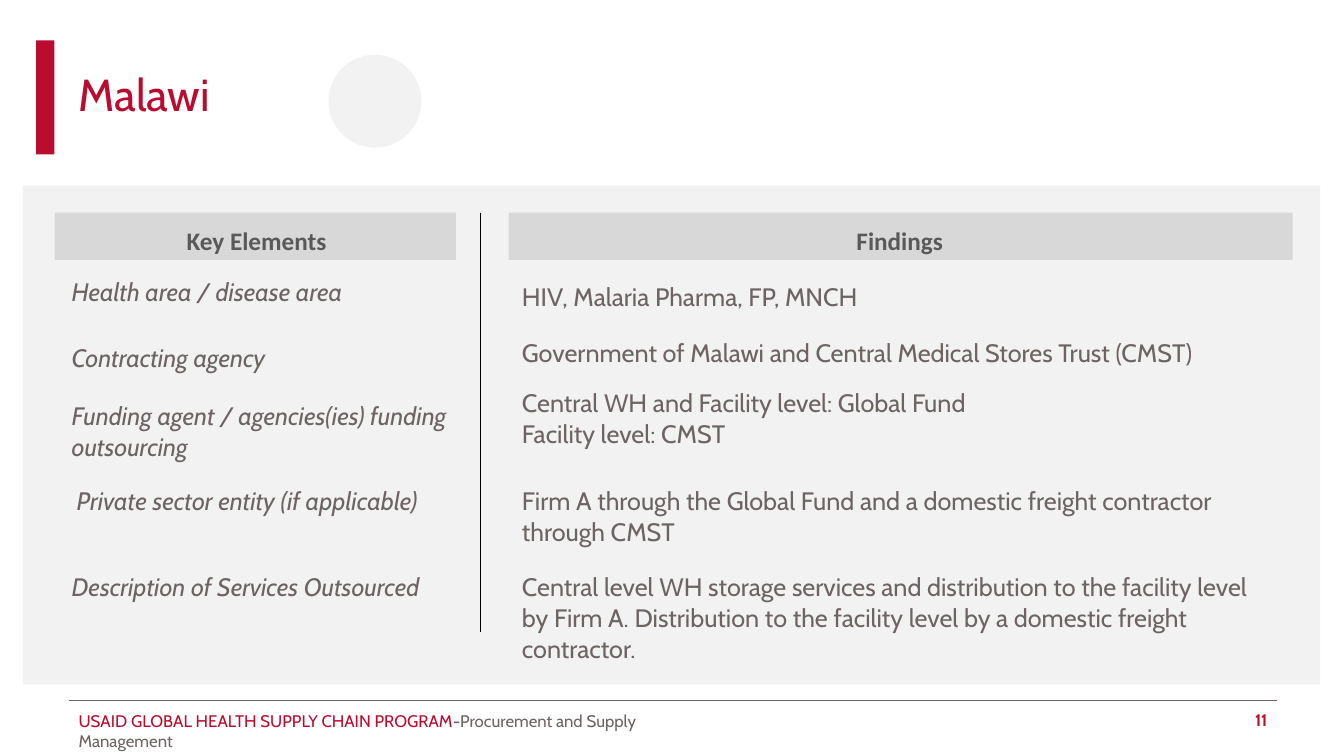
from lxml import etree
from pptx import Presentation
from pptx import util as u
from pptx.dml.color import RGBColor
from pptx.enum import shapes, text
from pptx.oxml.ns import qn

COLORS = {"red": "BA0C2F", "grey": "6C6463", "heading": "595959",
          "panel": "F2F2F2", "band": "D8D8D8", "black": "000000"}
NO_GRID_STYLE = "{2D5ABB26-0587-4C30-8999-92F81FD0307C}"


def style(paragraph, size, color, font="Cabin", bold=False, italic=False):
    """Format every run of a paragraph."""
    for run in paragraph.runs:
        run.font.size = u.Pt(size)
        run.font.name = font
        run.font.bold = bold
        run.font.italic = italic
        run.font.color.rgb = RGBColor.from_string(COLORS[color])


prs = Presentation()
prs.slide_width, prs.slide_height = u.Cm(33.87), u.Cm(19.05)
slide = prs.slides.add_slide(prs.slide_layouts[5])

# Title
title = slide.shapes.title
title.left, title.top, title.width, title.height = u.Cm(1.73), u.Cm(1.02), u.Cm(30.45), u.Cm(2.87)
title.text_frame.text = "Malawi"
title.text_frame.vertical_anchor = text.MSO_ANCHOR.MIDDLE
heading = title.text_frame.paragraphs[0]
heading.alignment = text.PP_ALIGN.LEFT
heading.line_spacing = 0.9
style(heading, 32, "red")

# Accent bar, panel, header bands and circle
RECT, OVAL = shapes.MSO_SHAPE.RECTANGLE, shapes.MSO_SHAPE.OVAL
for kind, left, top, width, height, color in [
    (RECT, 0.91, 1.02, 0.46, 2.87, "red"),
    (RECT, 0.58, 4.68, 32.69, 12.57, "panel"),
    (RECT, 1.38, 5.36, 10.11, 1.19, "band"),
    (RECT, 12.82, 5.36, 19.76, 1.19, "band"),
    (OVAL, 8.28, 1.38, 2.34, 2.34, "panel"),
]:
    block = slide.shapes.add_shape(kind, u.Cm(left), u.Cm(top), u.Cm(width), u.Cm(height))
    block.shadow.inherit = False
    block.fill.solid()
    block.fill.fore_color.rgb = RGBColor.from_string(COLORS[color])
    block.line.fill.background()

# Findings table: (key element, its top inset, findings, their top inset), insets in cm
headers = [("Key Elements", 2.9), ("Findings", 8.43)]
findings = [
    ("Health area / disease area", 0.13, "HIV, Malaria Pharma, FP, MNCH", 0.25),
    ("Contracting agency", 0.38,
     "Government of Malawi and Central Medical Stores Trust (CMST)", 0.25),
    ("Funding agent / agencies(ies) funding outsourcing", 0.56,
     "Central WH and Facility level: Global Fund\nFacility level: CMST", 0.25),
    ("Private sector entity (if applicable)", 0.38,
     "Firm A through the Global Fund and a domestic freight contractor through CMST", 0.38),
    ("Description of Services Outsourced", 0.13,
     "Central level WH storage services and distribution to the facility level by Firm A. "
     "Distribution to the facility level by a domestic freight contractor.", 0.13),
]
table = slide.shapes.add_table(len(findings) + 1, 2, u.Cm(1.55), u.Cm(5.59),
                               u.Cm(30.5), u.Cm(10.46)).table
table.first_row = table.horz_banding = False
table._tbl.tblPr.find(qn("a:tableStyleId")).text = NO_GRID_STYLE
for column, width in zip(table.columns, (11.35, 19.15)):
    column.width = u.Cm(width)
for row, height in zip(table.rows, (1.27, 1.4, 1.27, 2.34, 2.41, 1.75)):
    row.height = u.Cm(height)

for col, (header, indent) in enumerate(headers):
    cell = table.cell(0, col)
    cell.fill.background()
    cell.text_frame.text = header
    paragraph = cell.text_frame.paragraphs[0]
    paragraph._p.get_or_add_pPr().set("marL", str(u.Cm(indent)))
    style(paragraph, 18, "heading", "Calibri", bold=True)

for row, (element, element_inset, finding, finding_inset) in enumerate(findings, 1):
    for col, (content, inset) in enumerate([(element, element_inset), (finding, finding_inset)]):
        cell = table.cell(row, col)
        cell.fill.background()
        cell.margin_top = u.Cm(inset)
        cell.text_frame.text = content
        for paragraph in cell.text_frame.paragraphs:
            style(paragraph, 18, "grey", italic=col == 0)
private_entity = table.cell(4, 0).text_frame.paragraphs[0]
private_entity._p.get_or_add_pPr().set("marL", str(u.Cm(0.13)))

# Footer rule and column divider
for x1, y1, x2, y2, color in [(1.73, 17.65, 32.18, 17.65, "grey"),
                              (12.12, 5.36, 12.12, 15.93, "black")]:
    rule = slide.shapes.add_connector(shapes.MSO_CONNECTOR.STRAIGHT,
                                      u.Cm(x1), u.Cm(y1), u.Cm(x2), u.Cm(y2))
    rule.line.color.rgb = RGBColor.from_string(COLORS[color])
    rule.line.width = u.Pt(0.75)
    etree.SubElement(rule._element.spPr, qn("a:effectLst"))

# Footer text and page number
footer = slide.shapes.add_textbox(u.Cm(1.73), u.Cm(17.78), u.Cm(16.87), u.Cm(1.27)).text_frame
footer.word_wrap = True
program = footer.paragraphs[0]
for part in ("USAID GLOBAL HEALTH SUPPLY CHAIN PROGRAM", "-", "Procurement and Supply Management"):
    program.add_run().text = part
style(program, 12, "grey")
program.runs[0].font.color.rgb = RGBColor.from_string(COLORS["red"])
program.runs[1].font.bold = True

page = slide.shapes.add_textbox(u.Cm(29.62), u.Cm(17.75), u.Cm(2.57), u.Cm(0.79)).text_frame
page.word_wrap = True
page.vertical_anchor = text.MSO_ANCHOR.MIDDLE
page.text = "11"
page.paragraphs[0].alignment = text.PP_ALIGN.RIGHT
style(page.paragraphs[0], 12, "red", bold=True)

prs.save("out.pptx")
